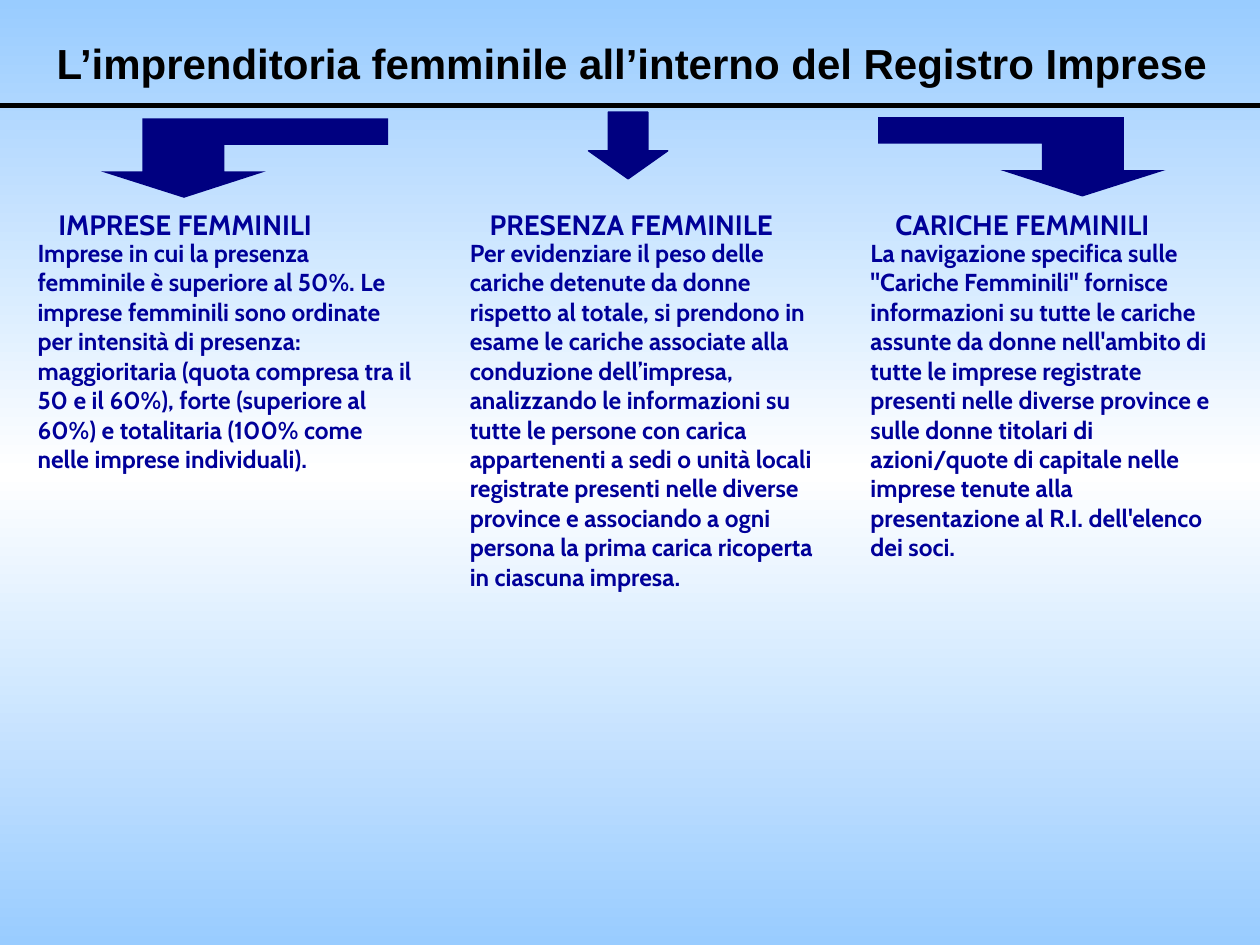
from copy import deepcopy
from lxml.etree import SubElement
from pptx import Presentation
from pptx.dml.color import RGBColor
from pptx.enum.shapes import MSO_CONNECTOR, MSO_SHAPE
from pptx.enum.text import MSO_ANCHOR, MSO_AUTO_SIZE, PP_ALIGN
from pptx.oxml.ns import qn
from pptx.util import Inches, Pt

SKY = RGBColor(0x99, 0xCC, 0xFF)
WHITE = RGBColor(0xFF, 0xFF, 0xFF)
BLACK = RGBColor(0, 0, 0)
NAVY = RGBColor(0, 0, 0x80)
BLUE = RGBColor(0, 0, 0x99)
COLS, ROWS = 100, 75
HEAD_TOP, BODY_TOP = 16, 18.4
BEND = [(6.6, 6.3), (0, 4.2), (3.3, 4.2), (3.3, 0), (22.8, 0),
        (22.8, 2.1), (9.8, 2.1), (9.8, 4.2), (13.1, 4.2)]
BEND_W = 22.8


class Page:
    def __init__(self, deck):
        self.wide, self.high = deck.slide_width, deck.slide_height
        self.slide = deck.slides.add_slide(deck.slide_layouts[5])
        self.shapes = self.slide.shapes

    def x(self, cols):
        return round(self.wide * cols / COLS)

    def y(self, rows):
        return round(self.high * rows / ROWS)

    def box(self, left, top, width, height):
        return self.x(left), self.y(top), self.x(width), self.y(height)

    def fade(self, *hues):
        fill = self.slide.background.fill
        fill.gradient()
        fill.gradient_angle = 90
        first = fill.gradient_stops[0]._gs
        first.addnext(deepcopy(first))
        for i, (stop, hue) in enumerate(zip(fill.gradient_stops, hues)):
            stop.position = i / (len(hues) - 1)
            stop.color.rgb = hue

    def label(self, shape, text, size, font, hue, align):
        frame = shape.text_frame
        frame.word_wrap = True
        frame.auto_size = MSO_AUTO_SIZE.SHAPE_TO_FIT_TEXT
        frame.vertical_anchor = MSO_ANCHOR.TOP
        para = frame.paragraphs[0]
        para.alignment = align
        run = para.add_run()
        run.text = text
        run.font.size = Pt(size)
        run.font.name = font
        run.font.bold = True
        run.font.color.rgb = hue

    def title(self, text, area):
        shape = self.shapes.title
        shape.left, shape.top, shape.width, shape.height = self.box(*area)
        self.label(shape, text, 24, "Arial", BLACK, PP_ALIGN.LEFT)

    def text(self, text, area, size, align=PP_ALIGN.LEFT):
        shape = self.shapes.add_textbox(*self.box(*area))
        self.label(shape, text, size, "Cabin", BLUE, align)

    def rule(self, row):
        line = self.shapes.add_connector(
            MSO_CONNECTOR.STRAIGHT, 0, self.y(row), self.wide, self.y(row))
        line.line.color.rgb = BLACK
        line.line.width = Pt(3)
        SubElement(line._element.spPr, qn("a:effectLst"))

    def paint(self, shape):
        shape.shadow.inherit = False
        shape.fill.solid()
        shape.fill.fore_color.rgb = NAVY

    def arrow(self, area):
        shape = self.shapes.add_shape(MSO_SHAPE.RIGHT_ARROW, *self.box(*area))
        shape.rotation = 90
        shape.adjustments[1] = 0.42
        self.paint(shape)
        shape.line.color.rgb = NAVY
        shape.line.width = Pt(0.75)

    def bend(self, left, top, flip=False):
        dots = [(self.x(left + (BEND_W - dx if flip else dx)), self.y(top + dy))
                for dx, dy in BEND]
        form = self.shapes.build_freeform(*dots[0])
        form.add_line_segments(dots[1:])
        shape = form.convert_to_shape()
        self.paint(shape)
        shape.line.fill.background()


def main():
    deck = Presentation()
    deck.slide_width, deck.slide_height = Inches(10), Inches(7.5)
    page = Page(deck)
    page.fade(SKY, WHITE, SKY)
    page.title("L’imprenditoria femminile all’interno del Registro Imprese",
               (3.5, 2.5, 100, 5))
    page.rule(8.4)
    page.bend(8, 9.4)
    page.arrow((47.2, 8.4, 5.3, 6.3))
    page.bend(69.7, 9.3, flip=True)
    topics = [
        ("IMPRESE FEMMINILI", 0.9, 27.6, 2, 32.3, 24.6,
         "Imprese in cui la presenza femminile è superiore al 50%. Le imprese "
         "femminili sono ordinate per intensità di presenza: maggioritaria "
         "(quota compresa tra il 50 e il 60%), forte (superiore al 60%) e "
         "totalitaria (100% come nelle imprese individuali)."),
        ("PRESENZA FEMMINILE", 32, 36.2, 36.3, 30.2, 36.4,
         "Per evidenziare il peso delle cariche detenute da donne rispetto al "
         "totale, si prendono in esame le cariche associate alla conduzione "
         "dell’impresa, analizzando le informazioni su tutte le persone con "
         "carica appartenenti a sedi o unità locali registrate presenti nelle "
         "diverse province e associando a ogni persona la prima carica "
         "ricoperta in ciascuna impresa."),
        ("CARICHE FEMMINILI", 66.6, 29.1, 68.1, 29.5, 29.3,
         "La navigazione specifica sulle \"Cariche Femminili\" fornisce "
         "informazioni su tutte le cariche assunte da donne nell'ambito di "
         "tutte le imprese registrate presenti nelle diverse province e sulle "
         "donne titolari di azioni/quote di capitale nelle imprese tenute alla "
         "presentazione al R.I. dell'elenco dei soci."),
    ]
    for head, left, width, edge, span, tall, body in topics:
        page.text(head, (left, HEAD_TOP, width, 3.7), 16, PP_ALIGN.CENTER)
        page.text(body, (edge, BODY_TOP, span, tall), 14)
    deck.save("out.pptx")


if __name__ == "__main__":
    main()
